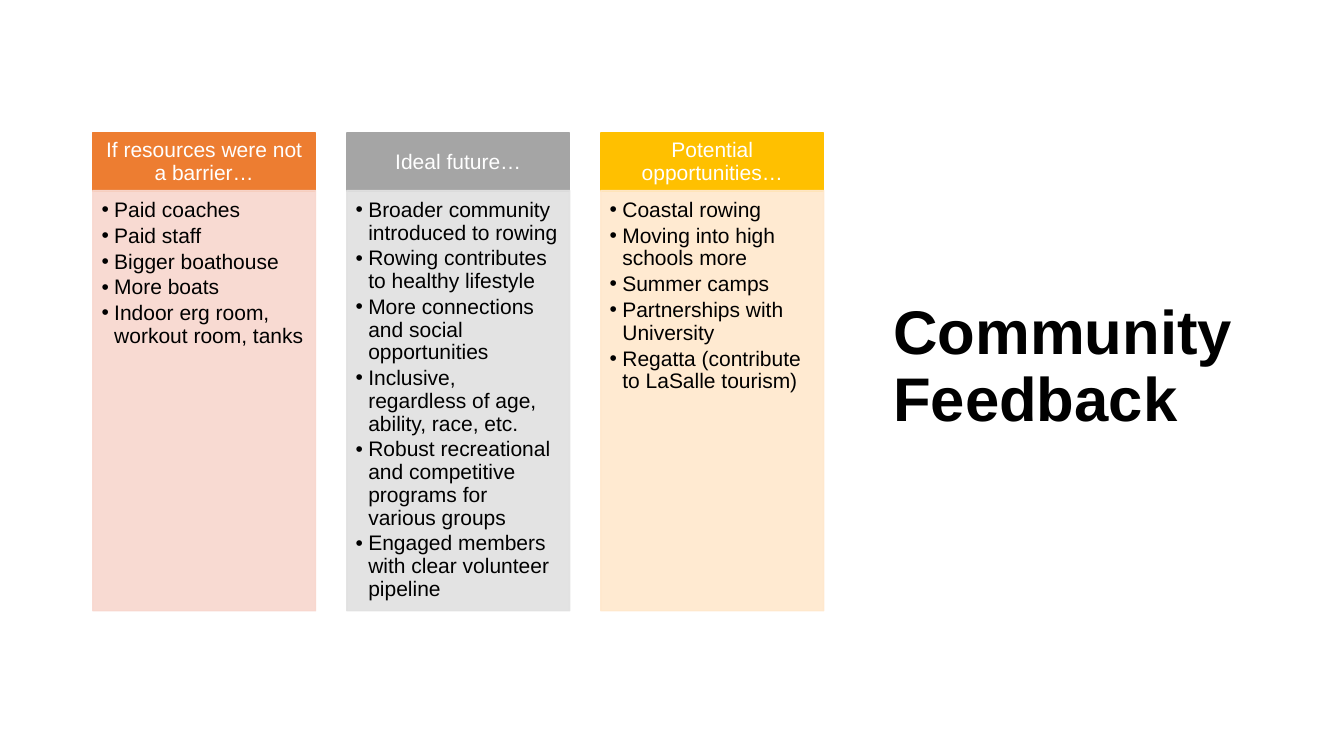
from dataclasses import dataclass

from lxml.etree import SubElement
from pptx import Presentation
from pptx.dml.color import RGBColor
from pptx.enum.shapes import MSO_SHAPE as Shape
from pptx.enum.text import MSO_ANCHOR as Anchor, MSO_AUTO_SIZE as AutoSize, PP_ALIGN as Align
from pptx.oxml.ns import qn
from pptx.util import Inches, Pt

LEFT, PITCH, WIDTH = 0.92, 2.52, 2.21
HEADER_TOP, HEADER_HEIGHT = 1.32, 0.58
BODY_TOP, BODY_HEIGHT = 1.89, 4.17
INDENT = Pt(9)
FONT = "Arial"


@dataclass
class Column:
    heading: str
    accent: str
    tint: str
    points: list[str]


COLUMNS = [
    Column("If resources were not a barrier…", "ED7D31", "F8D7CE", [
        "Paid coaches",
        "Paid staff",
        "Bigger boathouse",
        "More boats",
        "Indoor erg room, workout room, tanks",
    ]),
    Column("Ideal future…", "A5A5A5", "E1E1E1", [
        "Broader community introduced to rowing",
        "Rowing contributes to healthy lifestyle",
        "More connections and social opportunities",
        "Inclusive, regardless of age, ability, race, etc.",
        "Robust recreational and competitive programs for various groups",
        "Engaged members with clear volunteer pipeline",
    ]),
    Column("Potential opportunities…", "FFC000", "FFE8CC", [
        "Coastal rowing",
        "Moving into high schools more",
        "Summer camps",
        "Partnerships with University",
        "Regatta (contribute to LaSalle tourism)",
    ]),
]


def rgb(value: str) -> RGBColor:
    return RGBColor.from_string(value)


def style_text(tf, size: float, color: str, align: Align, after: float, bold: bool = False) -> None:
    for p in tf.paragraphs:
        p.alignment = align
        p.line_spacing = 0.9
        p.space_before = Pt(0)
        p.space_after = Pt(after)
        for r in p.runs:
            r.font.name = FONT
            r.font.size = Pt(size)
            r.font.bold = bold
            r.font.color.rgb = rgb(color)


def set_insets(tf, left: float, top: float, right: float, bottom: float) -> None:
    tf.margin_left, tf.margin_top = Pt(left), Pt(top)
    tf.margin_right, tf.margin_bottom = Pt(right), Pt(bottom)


def set_alpha(fill_xml, percent: int) -> None:
    color = fill_xml.find(qn("a:solidFill")).find(qn("a:srgbClr"))
    SubElement(color, qn("a:alpha"), val=str(percent * 1000))


def add_bullet(p) -> None:
    pPr = p._p.get_or_add_pPr()
    pPr.set("marL", str(INDENT))
    pPr.set("indent", str(-INDENT))
    SubElement(pPr, qn("a:buFont"), typeface=FONT)
    SubElement(pPr, qn("a:buChar"), char="•")


def add_box(s, left: float, top: float, height: float, color: str, text: str):
    box = s.shapes.add_shape(Shape.RECTANGLE, Inches(left), Inches(top), Inches(WIDTH), Inches(height))
    box.shadow.inherit = False
    box.fill.solid()
    box.fill.fore_color.rgb = rgb(color)
    box.line.color.rgb = rgb(color)
    box.line.width = Pt(1)
    box.text_frame.word_wrap = True
    box.text_frame.text = text
    return box


def add_column(s, left: float, column: Column) -> None:
    header = add_box(s, left, HEADER_TOP, HEADER_HEIGHT, column.accent, column.heading)
    tf = header.text_frame
    tf.vertical_anchor = Anchor.MIDDLE
    set_insets(tf, 8.4, 4.8, 8.4, 4.8)
    style_text(tf, 15, "FFFFFF", Align.CENTER, 0)

    body = add_box(s, left, BODY_TOP, BODY_HEIGHT, column.tint, "\n".join(column.points))
    spPr = body._element.spPr
    set_alpha(spPr, 90)
    set_alpha(spPr.find(qn("a:ln")), 90)
    tf = body.text_frame
    tf.vertical_anchor = Anchor.TOP
    set_insets(tf, 6.3, 6.3, 8.4, 9.45)
    style_text(tf, 15, "000000", Align.LEFT, 2.25)
    for p in tf.paragraphs:
        add_bullet(p)


def add_title(s, text: str) -> None:
    title = s.shapes.title
    title.left, title.top = Inches(8.76), Inches(0.6)
    title.width, title.height = Inches(3.65), Inches(6.1)
    tf = title.text_frame
    tf.text = text
    tf.word_wrap = True
    tf.auto_size = AutoSize.NONE
    tf.vertical_anchor = Anchor.MIDDLE
    style_text(tf, 44, "000000", Align.LEFT, 6, bold=True)


def main() -> None:
    prs = Presentation()
    prs.slide_width, prs.slide_height = Inches(13.33), Inches(7.5)
    s = prs.slides.add_slide(prs.slide_layouts.get_by_name("Title Only"))
    add_title(s, "Community Feedback")
    for i, column in enumerate(COLUMNS):
        add_column(s, LEFT + i * PITCH, column)
    prs.save("out.pptx")


if __name__ == "__main__":
    main()
